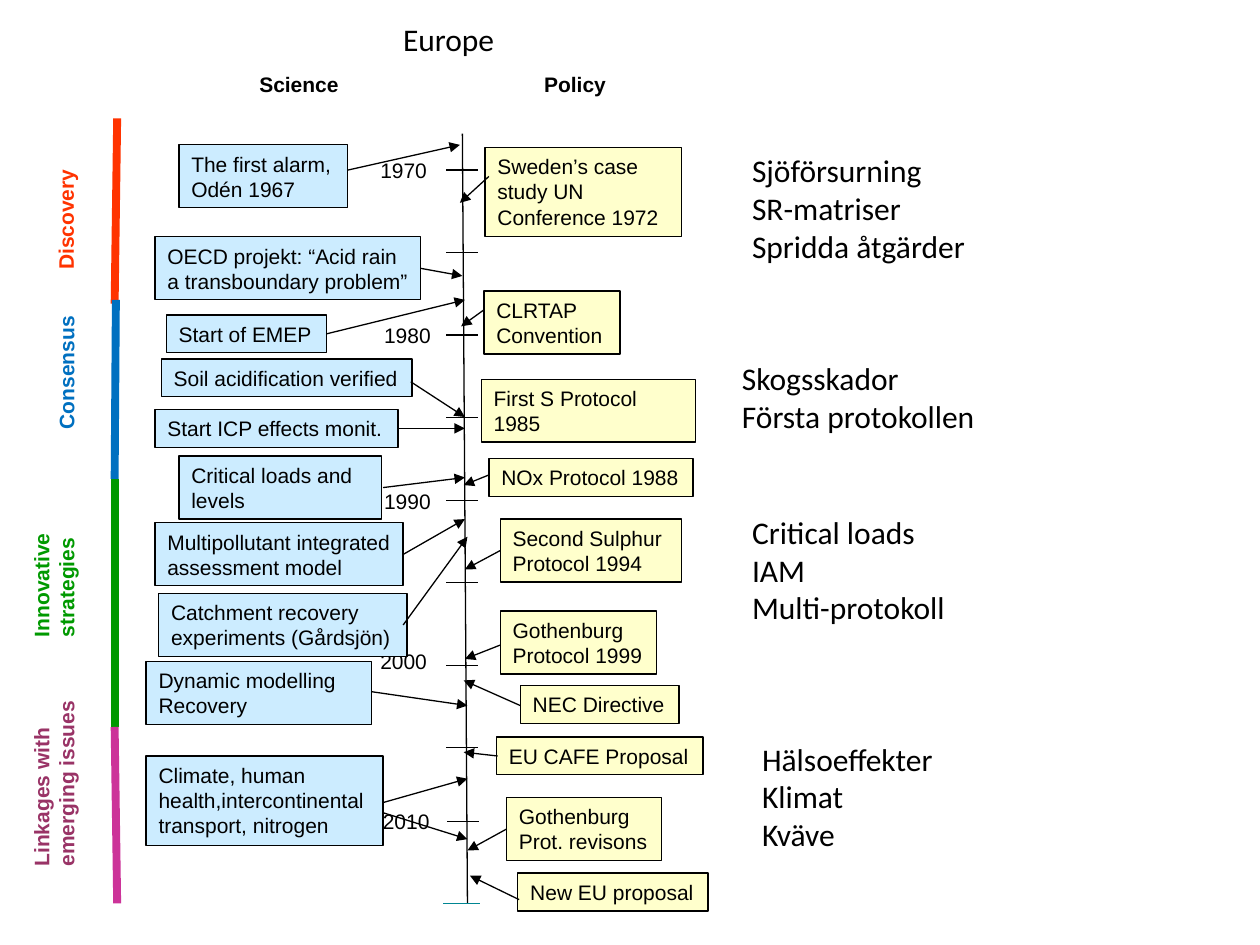
from dataclasses import dataclass

from lxml import etree
from pptx import Presentation
from pptx.dml.color import RGBColor
from pptx.enum.shapes import MSO_CONNECTOR, MSO_SHAPE
from pptx.enum.text import MSO_ANCHOR, MSO_AUTO_SIZE, PP_ALIGN
from pptx.oxml.ns import qn
from pptx.util import Inches, Pt

STRAIGHT = MSO_CONNECTOR.STRAIGHT
RECTANGLE = MSO_SHAPE.RECTANGLE
TOP = MSO_ANCHOR.TOP
FIT_SHAPE = MSO_AUTO_SIZE.SHAPE_TO_FIT_TEXT
LEFT = PP_ALIGN.LEFT

Point = tuple[float, float]
Frame = tuple[float, float, float, float]


@dataclass(frozen=True)
class Theme:
    label_font: str = "Arial"
    note_font: str = "Calibri"
    label_size: float = 12
    note_size: float = 18
    thin: float = 0.75
    end_width: float = 1
    thick: float = 4.5
    ink: str = "000000"
    axis_end: str = "008692"
    science: str = "CCECFF"
    policy: str = "FFFFCC"


@dataclass(frozen=True)
class Event:
    text: str
    frame: Frame
    arrows: tuple[tuple[Point, Point], ...]
    wrap: bool = False


@dataclass(frozen=True)
class Phase:
    text: str
    frame: Frame
    text_color: str
    bar_color: str
    start: Point
    end: Point
    wrap: bool = True


@dataclass(frozen=True)
class Label:
    text: str
    frame: Frame


THEME = Theme()

SCIENCE_EVENTS = [
    Event("The first alarm, Odén 1967", (1.42, 1.15, 1.34, 0.5),
          (((2.76, 1.35), (3.65, 1.15)),), True),
    Event("OECD projekt: “Acid rain a transboundary problem”", (1.23, 1.88, 2.11, 0.5),
          (((3.34, 2.13), (3.67, 2.19)),), True),
    Event("Start of EMEP", (1.32, 2.5, 1.27, 0.3), (((2.59, 2.65), (3.69, 2.38)),)),
    Event("Soil acidification verified", (1.28, 2.85, 1.99, 0.3),
          (((3.26, 3.03), (3.69, 3.31)),)),
    Event("Start ICP effects monit.", (1.23, 3.25, 1.93, 0.3),
          (((3.16, 3.4), (3.69, 3.4)),)),
    Event("Critical loads and levels", (1.42, 3.62, 1.61, 0.5),
          (((3.04, 3.87), (3.69, 3.79)),), True),
    Event("Multipollutant integrated assessment model", (1.23, 4.15, 1.97, 0.5),
          (((3.2, 4.4), (3.69, 4.12)),), True),
    Event("Catchment recovery experiments (Gårdsjön)", (1.26, 4.71, 1.97, 0.5),
          (((3.2, 4.96), (3.71, 4.26)),), True),
    Event("Dynamic modelling Recovery", (1.16, 5.25, 1.79, 0.5),
          (((2.95, 5.49), (3.71, 5.6)),), True),
    Event("Climate, human health,intercontinental\ntransport, nitrogen", (1.16, 6, 1.88, 0.71),
          (((3.04, 6.37), (3.71, 6.18)), ((3.04, 6.45), (3.71, 6.66))), True),
]

POLICY_EVENTS = [
    Event("Sweden’s case study UN Conference 1972", (3.85, 1.17, 1.56, 0.71),
          (((3.88, 1.4), (3.65, 1.61)),), True),
    Event("CLRTAP Convention", (3.84, 2.31, 1.08, 0.5),
          (((3.84, 2.46), (3.66, 2.59)),), True),
    Event("First S Protocol 1985", (3.82, 3.01, 1.7, 0.5), (), True),
    Event("NOx Protocol 1988", (3.88, 3.64, 1.62, 0.3), (((3.88, 3.77), (3.68, 3.85)),)),
    Event("Second Sulphur\nProtocol 1994", (3.97, 4.12, 1.44, 0.5),
          (((3.97, 4.37), (3.69, 4.52)),)),
    Event("Gothenburg\nProtocol 1999", (3.97, 4.85, 1.24, 0.5),
          (((3.97, 5.12), (3.69, 5.23)),)),
    Event("NEC Directive", (4.13, 5.44, 1.26, 0.3), (((4.13, 5.6), (3.68, 5.4)),)),
    Event("EU CAFE Proposal", (3.94, 5.85, 1.64, 0.3), (((3.95, 6), (3.68, 5.97)),)),
    Event("Gothenburg\nProt. revisons", (4.02, 6.33, 1.23, 0.5),
          (((4.02, 6.58), (3.71, 6.75)),)),
    Event("New EU proposal", (4.11, 6.93, 1.51, 0.3), (((4.12, 7.14), (3.73, 6.95)),)),
]

PHASES = [
    Phase("Discovery", (-0.12, 1.45, 1.28, 0.3), "FF3300", "FF3300",
          (0.93, 0.94), (0.91, 2.41)),
    Phase("Consensus", (-0.03, 2.8, 1.11, 0.3), "0070C0", "0070C0",
          (0.92, 2.38), (0.91, 3.8), False),
    Phase("Innovative strategies", (-0.4, 4.08, 1.65, 0.5), "009900", "009900",
          (0.91, 3.8), (0.91, 5.77)),
    Phase("Linkages with\nemerging issues", (-0.48, 5.82, 1.81, 0.5), "993366", "CC3399",
          (0.91, 5.77), (0.93, 7.17)),
]

HEADINGS = [Label("Science", (1.96, 0.52, 0.84, 0.3)), Label("Policy", (4.22, 0.52, 0.7, 0.3))]

YEARS = [Label(year, (left, top, 0.57, 0.3)) for year, left, top in (
    ("1970", 2.92, 1.2), ("1980", 2.95, 2.51), ("1990", 2.95, 3.83),
    ("2000", 2.92, 5.1), ("2010", 2.94, 6.37))]

NOTES = [
    Label("Europe", (3.1, 0.11, 1.09, 0.4)),
    Label("Sjöförsurning\nSR-matriser\nSpridda åtgärder", (5.87, 1.15, 1.91, 1.01)),
    Label("Skogsskador\nFörsta protokollen", (5.79, 2.8, 2.06, 0.71)),
    Label("Critical loads\nIAM\nMulti-protokoll", (5.87, 4.02, 1.75, 1.01)),
    Label("Hälsoeffekter\nKlimat\nKväve", (5.95, 5.82, 1.57, 1.01)),
]


def write_text(shape, text: str, wrap: bool = False, color: str = THEME.ink, bold: bool = False,
               font: str = THEME.label_font, size: float = THEME.label_size) -> None:
    frame = shape.text_frame
    frame.text = text
    frame.word_wrap = wrap
    frame.auto_size = FIT_SHAPE
    frame.vertical_anchor = TOP
    for paragraph in frame.paragraphs:
        paragraph.alignment = LEFT
        paragraph.font.name = font
        paragraph.font.size = Pt(size)
        paragraph.font.bold = bold
        paragraph.font.color.rgb = RGBColor.from_string(color)


def add_label(shapes, label: Label, **style):
    box = shapes.add_textbox(*map(Inches, label.frame))
    write_text(box, label.text, **style)
    return box


def add_line(shapes, start: Point, end: Point, color: str = THEME.ink,
             width: float = THEME.thin, arrow: bool = False) -> None:
    connector = shapes.add_connector(STRAIGHT, *map(Inches, (*start, *end)))
    connector.line.color.rgb = RGBColor.from_string(color)
    connector.line.width = Pt(width)
    properties = connector.element.spPr
    if arrow:
        etree.SubElement(properties.find(qn("a:ln")), qn("a:tailEnd"), type="triangle")
    etree.SubElement(properties, qn("a:effectLst"))


def add_event(shapes, event: Event, fill: str) -> None:
    box = shapes.add_shape(RECTANGLE, *map(Inches, event.frame))
    box.shadow.inherit = False
    box.fill.solid()
    box.fill.fore_color.rgb = RGBColor.from_string(fill)
    box.line.color.rgb = RGBColor.from_string(THEME.ink)
    box.line.width = Pt(THEME.thin)
    write_text(box, event.text, event.wrap)
    for start, end in event.arrows:
        add_line(shapes, start, end, arrow=True)


def add_phase(shapes, phase: Phase) -> None:
    add_line(shapes, phase.start, phase.end, phase.bar_color, THEME.thick)
    box = add_label(shapes, Label(phase.text, phase.frame), wrap=phase.wrap,
                    color=phase.text_color, bold=True)
    box.rotation = 270


def add_time_axis(slide) -> None:
    shapes = slide.shapes.add_group_shape().shapes
    add_line(shapes, (3.67, 1.06), (3.71, 7.17))
    for index in range(8):
        height = 1.35 + index * 0.655
        add_line(shapes, (3.54, height), (3.79, height))
    add_line(shapes, (3.55, 6.52), (3.8, 6.52))
    for year in YEARS:
        add_label(shapes, year)
    add_line(slide.shapes, (3.52, 7.17), (3.81, 7.17), THEME.axis_end, THEME.end_width)


def main() -> None:
    presentation = Presentation()
    presentation.slide_width = Inches(10)
    presentation.slide_height = Inches(7.5)
    slide = presentation.slides.add_slide(presentation.slide_layouts[6])
    add_time_axis(slide)
    for heading in HEADINGS:
        add_label(slide.shapes, heading, bold=True)
    for phase in PHASES:
        add_phase(slide.shapes, phase)
    for events, fill in ((SCIENCE_EVENTS, THEME.science), (POLICY_EVENTS, THEME.policy)):
        for event in events:
            add_event(slide.shapes, event, fill)
    for note in NOTES:
        add_label(slide.shapes, note, font=THEME.note_font, size=THEME.note_size)
    presentation.save("out.pptx")


if __name__ == "__main__":
    main()
